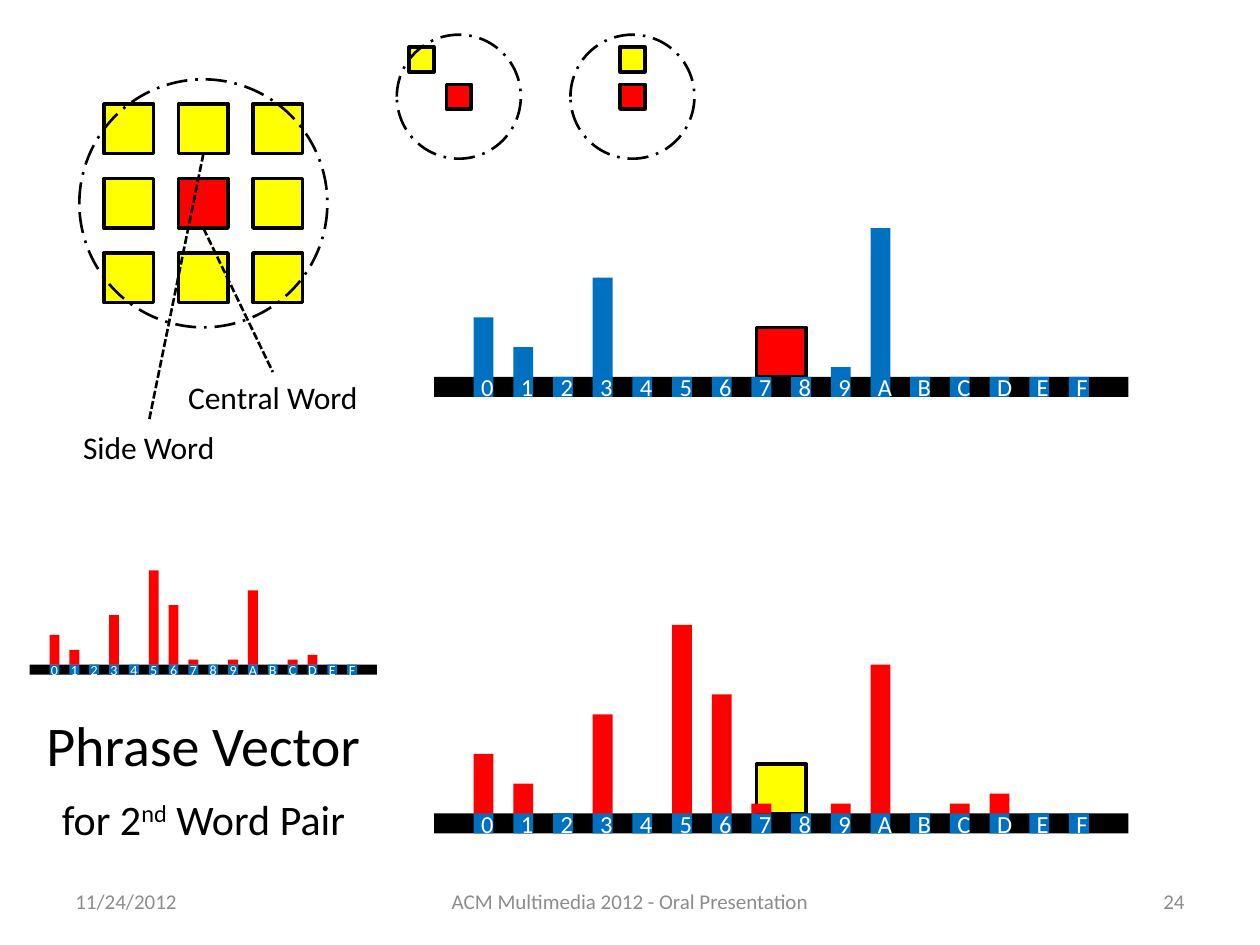
import dataclasses

import pptx
import pptx.dml.color
import pptx.enum.dml
import pptx.enum.shapes
import pptx.enum.text
import pptx.oxml.ns
import pptx.util
from lxml import etree

ALIGN = pptx.enum.text.PP_ALIGN
DASH = pptx.enum.dml.MSO_LINE
SHAPE = pptx.enum.shapes.MSO_SHAPE
UNIT = pptx.util.Mm(2)  # one grid column or row


@dataclasses.dataclass(frozen=True)
class Theme:
    font: str = "Calibri"
    black: str = "000000"
    white: str = "FFFFFF"
    grey: str = "8C8C8C"
    red: str = "FF0000"
    yellow: str = "FFFF00"
    blue: str = "0070C0"
    title: int = 32
    subtitle: int = 24
    label: int = 18
    bin: int = 14
    small_bin: int = 8
    footer: int = 12
    outline: float = 2
    thin: float = 1.5


def rgb(value):
    return pptx.dml.color.RGBColor.from_string(value)


def grid(*lengths):
    return [round(length * UNIT) for length in lengths]


class Canvas:
    """Draws on one slide, with all lengths in grid columns and rows."""

    def __init__(self, slide, theme):
        self.slide = slide
        self.theme = theme

    def stroke(self, line, width, dash=None):
        line.color.rgb = rgb(self.theme.black)
        line.width = pptx.util.Pt(width)
        if dash:
            line.dash_style = dash

    def shape(self, box, fill=None, kind=SHAPE.RECTANGLE, parent=None):
        sp = (parent or self.slide).shapes.add_shape(kind, *grid(*box))
        sp.shadow.inherit = False
        if fill:
            sp.fill.solid()
            sp.fill.fore_color.rgb = rgb(fill)
        else:
            sp.fill.background()
        sp.line.fill.background()
        return sp

    def set_text(self, sp, runs, size, color, align=ALIGN.CENTER):
        """Fill a shape with one paragraph; runs are (text, baseline) pairs."""
        tf = sp.text_frame
        tf.word_wrap = True
        tf.auto_size = pptx.enum.text.MSO_AUTO_SIZE.NONE
        tf.vertical_anchor = pptx.enum.text.MSO_ANCHOR.MIDDLE
        p = tf.paragraphs[0]
        p.alignment = align
        p.font.name = self.theme.font
        p.font.size = pptx.util.Pt(size)
        p.font.color.rgb = rgb(color)
        for text, baseline in runs:
            r = p.add_run()
            r.text = text
            if baseline:
                r._r.get_or_add_rPr().set("baseline", str(baseline * 1000))

    def title(self, box, text):
        sp = self.slide.shapes.title
        sp.left, sp.top, sp.width, sp.height = grid(*box)
        self.set_text(sp, [(text, 0)], self.theme.title, self.theme.black)

    def text(self, box, runs, size, color=None, align=ALIGN.CENTER):
        sp = self.slide.shapes.add_textbox(*grid(*box))
        self.set_text(sp, runs, size, color or self.theme.black, align)

    def leader(self, start, end):
        cxn = self.slide.shapes.add_connector(
            pptx.enum.shapes.MSO_CONNECTOR.STRAIGHT, *grid(*start, *end))
        self.stroke(cxn.line, self.theme.thin, DASH.SQUARE_DOT)
        etree.SubElement(cxn._element.spPr, pptx.oxml.ns.qn("a:effectLst"))

    def word(self, left, top, fill, size=5, parent=None):
        sp = self.shape((left, top, size, size), fill, parent=parent)
        self.stroke(sp.line, self.theme.outline)

    def neighbourhood(self, left, top, scale, side_cells):
        """Central word and its side words, given as (column, row), in a ring."""
        group = self.slide.shapes.add_group_shape()
        for col, row in [(1, 1), *side_cells]:
            fill = self.theme.red if (col, row) == (1, 1) else self.theme.yellow
            self.word(left + (2.5 + 7.5 * col) * scale,
                      top + (2.5 + 7.5 * row) * scale, fill, 5 * scale, group)
        ring = self.shape((left, top, 25 * scale, 25 * scale),
                          kind=SHAPE.OVAL, parent=group)
        self.stroke(ring.line, self.theme.thin, DASH.LONG_DASH_DOT)

    def histogram(self, left, base, scale, counts, fill, size):
        """Axis of sixteen labelled bins with bars standing on it."""
        group = self.slide.shapes.add_group_shape()
        width = 2 * scale
        self.shape((left, base, 70 * scale, width), self.theme.black, parent=group)
        for i, name in enumerate("0123456789ABCDEF"):
            x = left + (4 + 4 * i) * scale
            sp = self.shape((x, base, width, width), self.theme.blue, parent=group)
            self.set_text(sp, [(name, 0)], size, self.theme.white)
            height = counts.get(name, 0) * scale
            if height:
                self.shape((x, base - height, width, height), fill, parent=group)


def main():
    prs = pptx.Presentation()
    prs.slide_width = pptx.util.Inches(10)
    prs.slide_height = pptx.util.Inches(7.5)
    theme = Theme()
    canvas = Canvas(prs.slides.add_slide(prs.slide_layouts[5]), theme)

    all_sides = [(c, r) for r in range(3) for c in range(3) if (c, r) != (1, 1)]
    canvas.neighbourhood(8, 8, 1, all_sides)
    canvas.neighbourhood(40, 3.5, 0.5, [(0, 0)])
    canvas.neighbourhood(57.5, 3.5, 0.5, [(1, 0)])

    central_counts = {"0": 6, "1": 3, "3": 10, "9": 1, "A": 15}
    pair_counts = central_counts | {"5": 19, "6": 12, "7": 1, "C": 1, "D": 2}
    canvas.word(76.25, 33, theme.red)
    canvas.word(76.25, 77, theme.yellow)
    canvas.histogram(43.75, 38, 1, central_counts, theme.blue, theme.bin)
    canvas.histogram(43.75, 82, 1, pair_counts, theme.red, theme.bin)
    canvas.histogram(3, 67, 0.5, pair_counts, theme.red, theme.small_bin)

    canvas.title((0.5, 70, 40, 10), "Phrase Vector")
    canvas.text((0.5, 77.5, 40, 10),
                [("for 2", 0), ("nd", 30), (" Word Pair", 0)], theme.subtitle)
    canvas.text((15, 37.5, 25, 5), [("Central Word", 0)], theme.label)
    canvas.text((2.5, 42.5, 25, 5), [("Side Word", 0)], theme.label)
    canvas.leader((20.5, 23), (27.5, 37.5))
    canvas.leader((20.5, 15.5), (15, 42.5))

    for left, width, text, align in [
        (6.35, 29.63, "11/24/2012", ALIGN.LEFT),
        (43.39, 40.22, "ACM Multimedia 2012 - Oral Presentation", ALIGN.CENTER),
        (91.02, 29.63, "24", ALIGN.RIGHT),
    ]:
        canvas.text((left, 88.27, width, 5.07), [(text, 0)],
                    theme.footer, theme.grey, align)
    prs.save("out.pptx")


if __name__ == "__main__":
    main()
